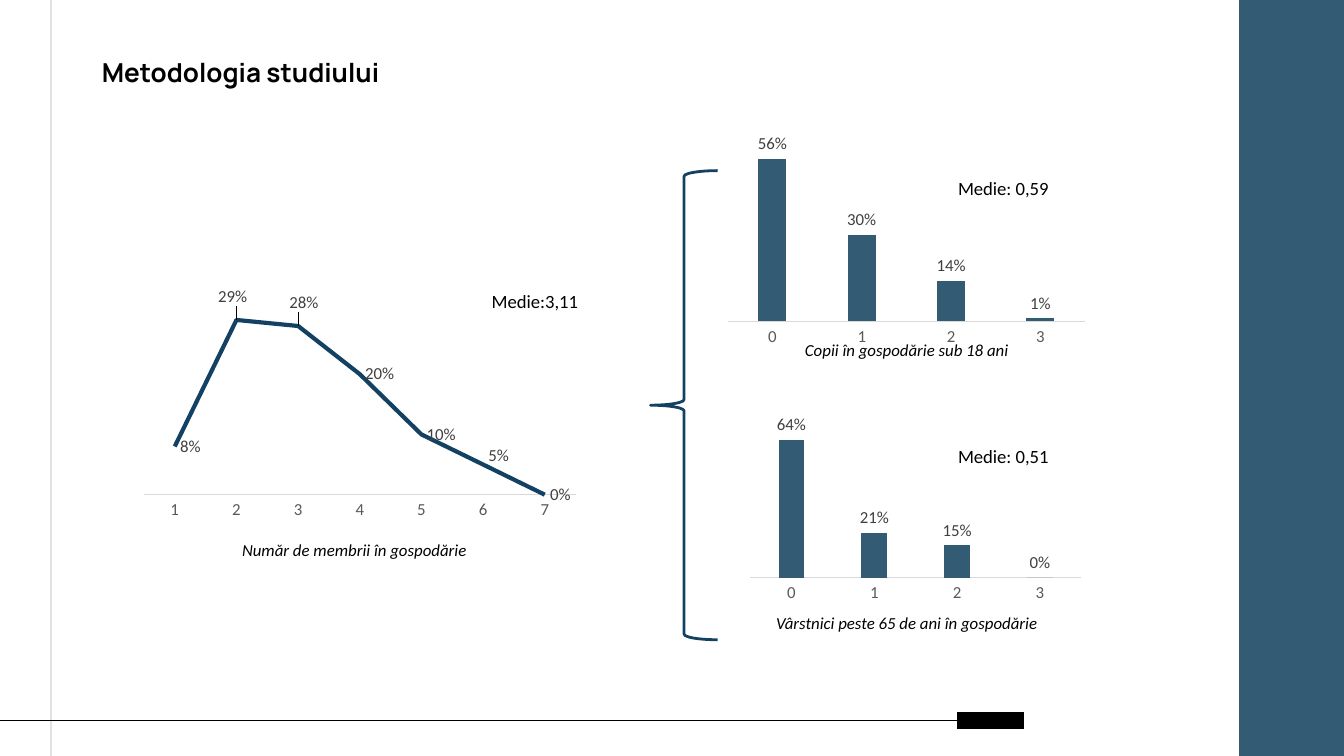
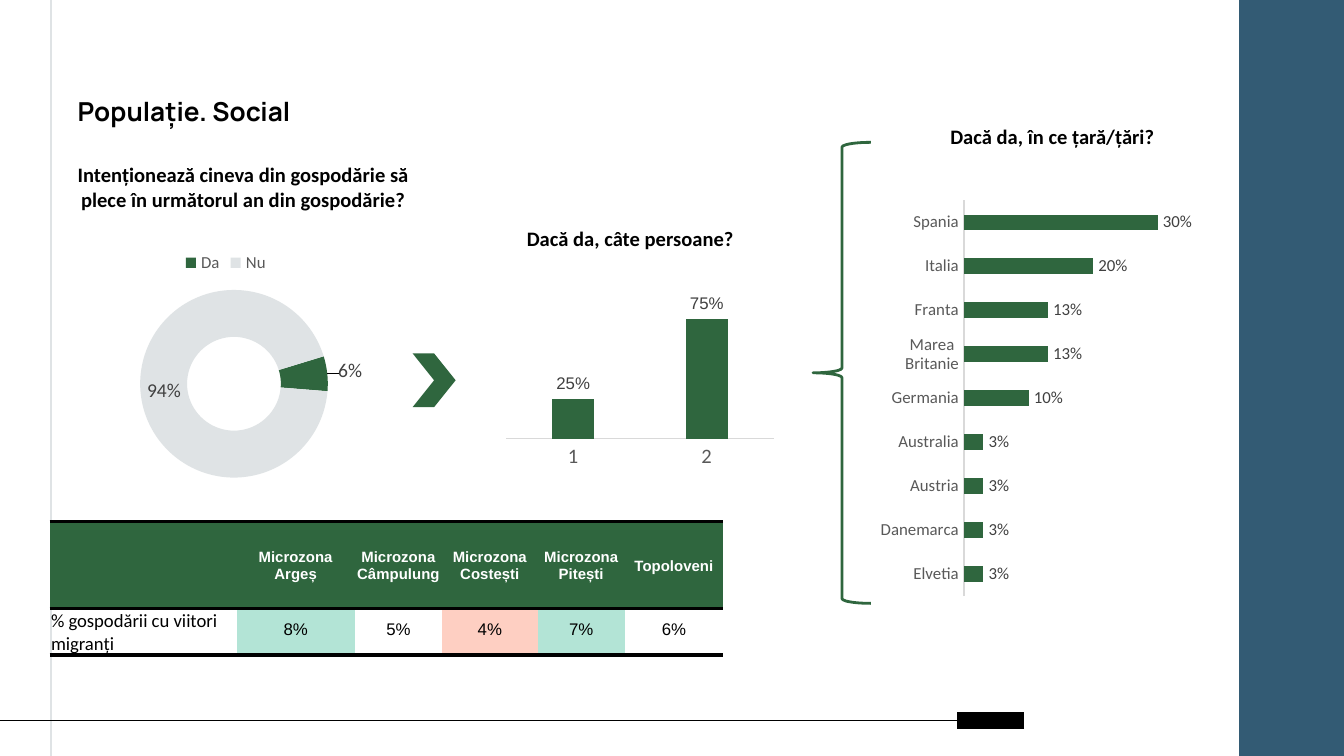
from lxml import etree
from pptx import Presentation
from pptx import util as u
from pptx.chart.data import CategoryChartData
from pptx.dml.color import RGBColor
from pptx.enum import chart as ch, shapes, text
from pptx.oxml import parse_xml
from pptx.oxml.ns import nsdecls, qn

Inches, Pt = u.Inches, u.Pt
BLUE = RGBColor(0x33, 0x5B, 0x74)
NAVY = RGBColor(0x13, 0x41, 0x63)
GREEN = RGBColor(0x2F, 0x66, 0x3E)
MINT = RGBColor(0xB3, 0xE4, 0xD6)
PEACH = RGBColor(0xFE, 0xCF, 0xC2)
PALE = RGBColor(0xDF, 0xE3, 0xE5)
AXIS = RGBColor(0xD9, 0xD9, 0xD9)
GREY = RGBColor(0x59, 0x59, 0x59)
DARK = RGBColor(0x40, 0x40, 0x40)
BLACK = RGBColor(0, 0, 0)
WHITE = RGBColor(0xFF, 0xFF, 0xFF)
LEFT, CENTER = text.PP_ALIGN.LEFT, text.PP_ALIGN.CENTER
TYPE, POS = ch.XL_CHART_TYPE, ch.XL_LABEL_POSITION


def manual_layout(tags):
    inner = "".join(f'<c:{tag} val="{val}"/>' for tag, val in tags)
    return parse_xml(f'<c:layout {nsdecls("c")}><c:manualLayout>{inner}</c:manualLayout></c:layout>')


def add_chart(s, kind, box, cats, vals, color, plot_box, top=None, gap=219, pos=POS.OUTSIDE_END,
              cat_size=9, label_size=9, label_font="Calibri", moved={}):
    data = CategoryChartData(number_format="0%")
    data.categories = cats
    data.add_series("Series 1", vals)
    chart = s.shapes.add_chart(kind, *map(Inches, box), data).chart
    chart.has_title = chart.has_legend = False
    chart.font.name, chart.font.size, chart.font.color.rgb = "Arial", Pt(10), BLACK
    plot = chart.plots[0]
    plot.vary_by_categories = kind == TYPE.DOUGHNUT
    series = plot.series[0]

    if kind != TYPE.DOUGHNUT:
        axis = chart.category_axis
        axis.major_tick_mark = axis.minor_tick_mark = ch.XL_TICK_MARK.NONE
        axis.has_major_gridlines = False
        axis.format.line.color.rgb = AXIS
        axis.format.line.width = Pt(0.75)
        f = axis.tick_labels.font
        f.name, f.size, f.color.rgb = "Calibri", Pt(cat_size), GREY
        axis.reverse_order = kind == TYPE.BAR_CLUSTERED
        value = chart.value_axis
        value.has_major_gridlines = value.visible = False
        value.minimum_scale, value.maximum_scale = 0, top
    if kind == TYPE.LINE:
        series.smooth = False
        series.format.line.color.rgb = color
        series.format.line.width = Pt(2.25)
    elif kind != TYPE.DOUGHNUT:
        plot.gap_width = gap
        plot.overlap = -27 if kind == TYPE.COLUMN_CLUSTERED else 0
        series.format.fill.solid()
        series.format.fill.fore_color.rgb = color

    labels = series.data_labels
    labels.show_value = True
    labels.number_format, labels.number_format_is_linked = "0%", False
    for item in [labels] + [series.points[i].data_label for i in moved]:
        f = item.font
        f.name, f.size, f.color.rgb = label_font, Pt(label_size), DARK
        if pos is not None:
            item.position = pos
    for i, (dx, dy) in moved.items():
        idx = plot._element.xpath(f".//c:dLbl/c:idx[@val='{i}']")[0]
        idx.addnext(manual_layout([("x", dx), ("y", dy)]))

    area = chart._chartSpace.xpath(".//c:plotArea")[0]
    for old in area.findall(qn("c:layout")):
        area.remove(old)
    area.insert(0, manual_layout([("layoutTarget", "inner"), ("xMode", "edge"), ("yMode", "edge")]
                                 + list(zip("xywh", plot_box))))
    return chart


prs = Presentation()
prs.slide_width, prs.slide_height = Inches(10), Inches(5.625)
slides = []
for brace_box, brace_color in [((4.84, 1.27, 0.5, 3.49), NAVY), ((6.05, 1.06, 0.43, 3.43), GREEN)]:
    s = prs.slides.add_slide(prs.slide_layouts[6])
    slides.append(s)
    band = s.shapes.add_shape(shapes.MSO_SHAPE.RECTANGLE, Inches(9.22), 0, Inches(0.78), prs.slide_height)
    band.shadow.inherit = False
    band.fill.solid()
    band.fill.fore_color.rgb = BLUE
    band.line.fill.background()
    for ends, color, width in [((0.38, -0.04, 0.38, 5.66), PALE, 0.75),
                               ((7.62, 5.36, 7.12, 5.36), BLACK, 9),
                               ((7.12, 5.36, -0.09, 5.36), BLACK, 0.75)]:
        c = s.shapes.add_connector(shapes.MSO_CONNECTOR.STRAIGHT, *map(Inches, ends))
        c.line.color.rgb, c.line.width = color, Pt(width)
        etree.SubElement(c._element.spPr, qn("a:effectLst"))
    brace = s.shapes.add_shape(shapes.MSO_SHAPE.LEFT_BRACE, *map(Inches, brace_box))
    brace.shadow.inherit = False
    brace.fill.background()
    brace.line.color.rgb, brace.line.width = brace_color, Pt(1.5)
study, social = slides

add_chart(study, TYPE.LINE, (0.93, 1.94, 3.53, 2.15), list("1234567"),
          [0.08, 0.29, 0.28, 0.2, 0.1, 0.05, 0], NAVY, (0.04, 0.08, 0.91, 0.73), 0.35, pos=POS.RIGHT,
          moved={1: (-0.05, -0.08), 2: (-0.03, -0.08), 5: (0, -0.03)})
add_chart(study, TYPE.COLUMN_CLUSTERED, (5.36, 1, 2.77, 1.6), list("0123"),
          [0.56, 0.3, 0.14, 0.01], BLUE, (0.02, 0.06, 0.96, 0.81), 0.6)
add_chart(study, TYPE.COLUMN_CLUSTERED, (5.36, 3.02, 2.77, 1.6), list("0123"),
          [0.64, 0.21, 0.15, 0], BLUE, (0.08, 0.1, 0.89, 0.7), 0.7)

ring = add_chart(social, TYPE.DOUGHNUT, (0.45, 1.77, 2.46, 1.94), ["Da", "Nu"], [0.06, 0.94], None,
                 (0.24, 0.2, 0.57, 0.72), pos=None, label_size=10.5, moved={0: (0.14, -0.02)})
for i, color in enumerate([GREEN, PALE]):
    fill = ring.plots[0].series[0].points[i].format.fill
    fill.solid()
    fill.fore_color.rgb = color
ring._chartSpace.xpath(".//c:firstSliceAng")[0].set("val", "73")
ring.has_legend = True
ring.legend.position = ch.XL_LEGEND_POSITION.TOP
ring.legend.include_in_layout = False
f = ring.legend.font
f.name, f.size, f.color.rgb = "Calibri", Pt(9), GREY
add_chart(social, TYPE.COLUMN_CLUSTERED, (3.61, 2.17, 2.26, 1.46), ["1", "2"], [0.25, 0.75], GREEN,
          (0.07, 0.1, 0.88, 0.65), 0.8, cat_size=11, label_font="Arial")
add_chart(social, TYPE.BAR_CLUSTERED, (6.47, 1.16, 2.51, 3.31),
          ["Spania", "Italia", "Franta", "Marea Britanie", "Germania", "Australia", "Austria",
           "Danemarca", "Elvetia"],
          [0.3, 0.2, 0.13, 0.13, 0.1, 0.03, 0.03, 0.03, 0.03], GREEN, (0.28, 0.1, 0.67, 0.89), 0.35, gap=182)

chevron = social.shapes.add_shape(shapes.MSO_SHAPE.CHEVRON, *map(Inches, (3.07, 2.63, 0.32, 0.4)))
chevron.shadow.inherit = False
chevron.fill.solid()
chevron.fill.fore_color.rgb = GREEN
chevron.line.fill.background()

STYLES = {
    "title": ("Manrope", 14, True, False, LEFT, 0.1),
    "question": ("Calibri", 11, True, False, CENTER, 0.05),
    "caption": ("Calibri", 9, False, True, CENTER, 0.05),
    "mean": ("Calibri", 10, False, False, LEFT, 0.05),
}
for s, style, box, words in [
    (study, "title", (0.66, 0.32, 8.43, 0.4), "Metodologia studiului"),
    (study, "caption", (0.83, 3.97, 3.61, 0.25), "Număr de membrii în gospodărie"),
    (study, "caption", (4.94, 2.48, 3.61, 0.25), "Copii în gospodărie sub 18 ani"),
    (study, "caption", (4.94, 4.51, 3.61, 0.25), "Vârstnici peste 65 de ani în gospodărie"),
    (study, "mean", (3.56, 2.11, 0.88, 0.27), "Medie:3,11"),
    (study, "mean", (7.03, 1.27, 0.88, 0.27), "Medie: 0,59"),
    (study, "mean", (7.03, 3.26, 0.88, 0.27), "Medie: 0,51"),
    (social, "title", (0.48, 0.61, 8.43, 0.4), "Populație. Social"),
    (social, "question", (0.37, 1.16, 2.88, 0.47),
     "Intenționează cineva din gospodărie să plece în următorul an din gospodărie?"),
    (social, "question", (3.46, 1.63, 2.46, 0.29), "Dacă da, câte persoane?"),
    (social, "question", (6.39, 0.87, 2.88, 0.29), "Dacă da, în ce țară/țări?"),
]:
    name, size, bold, italic, align, inset = STYLES[style]
    tf = s.shapes.add_textbox(*map(Inches, box)).text_frame
    tf.word_wrap = style != "mean"
    tf.margin_top = tf.margin_bottom = Inches(inset)
    tf.text = words
    p = tf.paragraphs[0]
    p.alignment = align
    f = p.runs[0].font
    f.name, f.size, f.bold, f.italic, f.color.rgb = name, Pt(size), bold, italic, BLACK

rows = [["", "Microzona Argeș", "Microzona\nCâmpulung", "Microzona Costești", "Microzona Pitești", "Topoloveni"],
        ["% gospodării cu viitori migranți", "8%", "5%", "4%", "7%", "6%"]]
tints = {1: MINT, 3: PEACH, 4: MINT}
frame = social.shapes.add_table(2, 6, *map(Inches, (0.37, 3.88, 5.01, 0.99)))
table = frame.table
table.first_row = table.horz_banding = False
table._tbl.xpath(".//a:tableStyleId")[0].text = "{2D5ABB26-0587-4C30-8999-92F81FD0307C}"
for column, width in zip(table.columns, [1.39, 0.88, 0.65, 0.71, 0.65, 0.73]):
    column.width = Inches(width)
for row, height in zip(table.rows, [0.65, 0.34]):
    row.height = Inches(height)
for i, row in enumerate(rows):
    for j, words in enumerate(row):
        cell = table.cell(i, j)
        cell.vertical_anchor = text.MSO_ANCHOR.MIDDLE
        cell.margin_left = cell.margin_right = cell.margin_top = Inches(0.01)
        cell.margin_bottom = Inches(0.05 if i and j else 0)
        for side in ["lnT", "lnB"]:
            cell._tc.get_or_add_tcPr().append(parse_xml(
                f'<a:{side} {nsdecls("a")} w="25400"><a:solidFill><a:srgbClr val="{BLACK}"/></a:solidFill></a:{side}>'))
        color = tints.get(j) if i else GREEN
        if color is None:
            cell.fill.background()
        else:
            cell.fill.solid()
            cell.fill.fore_color.rgb = color
        cell.text_frame.text = words
        for p in cell.text_frame.paragraphs:
            p.alignment = CENTER if j else LEFT
            for r in p.runs:
                r.font.name = "Arial" if j else "Calibri"
                r.font.size = Pt(8 if i == 0 else 9 if j else 10)
                r.font.bold = i == 0
                r.font.color.rgb = BLACK if i else WHITE

prs.save("out.pptx")
